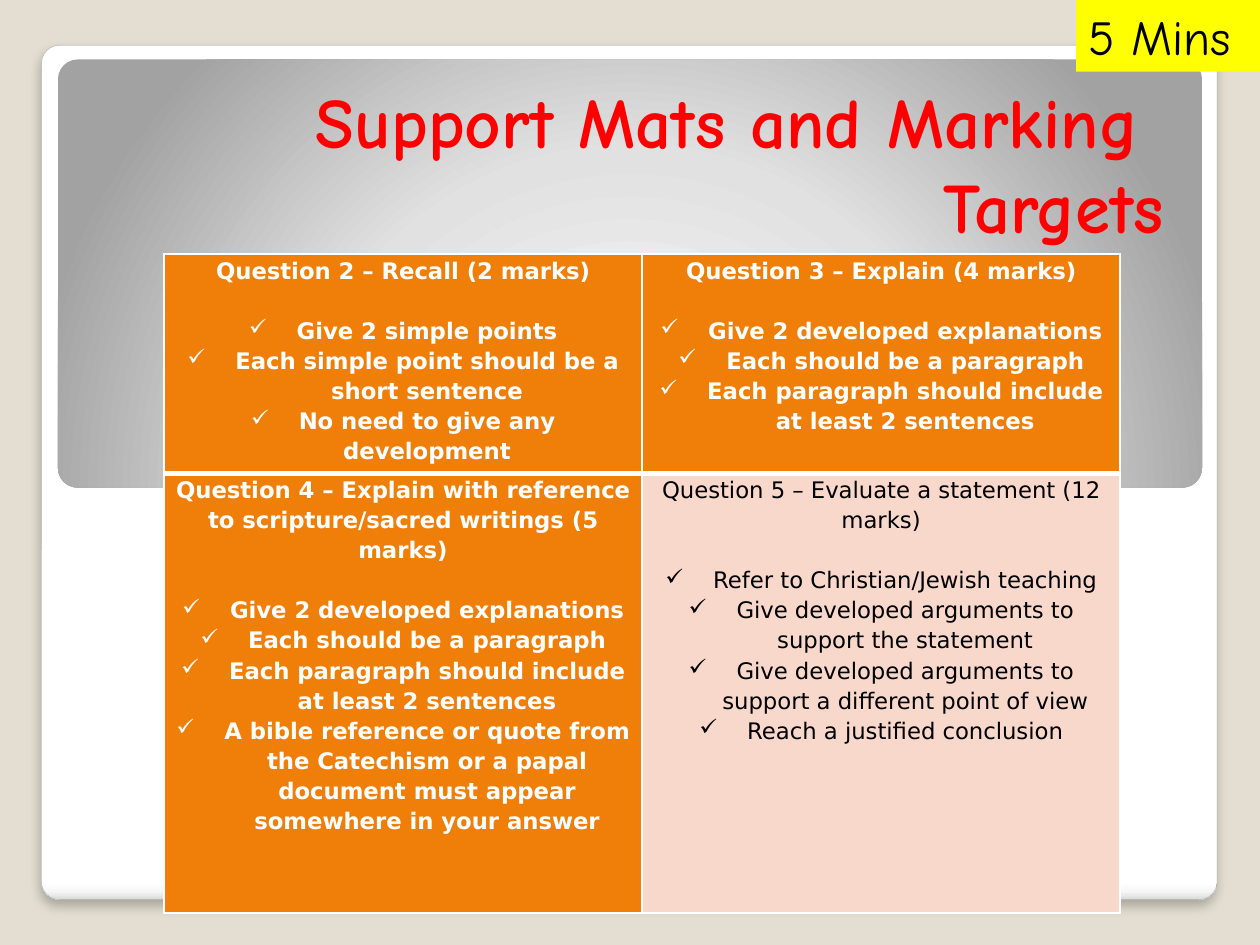
from pptx import Presentation
from pptx.dml.color import RGBColor
from pptx.enum.shapes import MSO_SHAPE
from pptx.enum.text import MSO_ANCHOR, MSO_AUTO_SIZE, PP_ALIGN
from pptx.oxml import parse_xml
from pptx.oxml.ns import nsdecls
from pptx.util import Emu, Inches, Pt

WIDTH, HEIGHT = Inches(10), Inches(7.5)
TITLE_FONT, BODY_FONT = "Comic Neue", "DejaVu Sans"
ORANGE, PINK, WHITE, BLACK = "F07F09", "F9D8CC", "FFFFFF", "000000"
ROW_SHARES = (1.74, 3.49)
LINE_GAP = Pt(17.2)

QUESTIONS = [
    [
        ("Question 2 – Recall (2 marks)",
         ["Give 2 simple points",
          "Each simple point should be a short sentence",
          "No need to give any development"]),
        ("Question 3 – Explain (4 marks)",
         ["Give 2 developed explanations",
          "Each should be a paragraph",
          "Each paragraph should include at least 2 sentences"]),
    ],
    [
        ("Question 4 – Explain with reference to scripture/sacred writings (5 marks)",
         ["Give 2 developed explanations",
          "Each should be a paragraph",
          "Each paragraph should include at least 2 sentences",
          "A bible reference or quote from the Catechism or a papal document "
          "must appear somewhere in your answer"]),
        ("Question 5 – Evaluate a statement (12 marks)",
         ["Refer to Christian/Jewish teaching",
          "Give developed arguments to support the statement",
          "Give developed arguments to support a different point of view",
          "Reach a justified conclusion"]),
    ],
]


def rgb(value):
    """Turn a hex string into a colour."""
    return RGBColor.from_string(value)


def share(x, y, w, h):
    """Return a box in slide units from shares of the slide's size."""
    return Emu(int(x * WIDTH)), Emu(int(y * HEIGHT)), Emu(int(w * WIDTH)), Emu(int(h * HEIGHT))


def set_font(p, name, size, color, bold=False):
    """Format the font of a paragraph."""
    p.font.name, p.font.size, p.font.bold = name, Pt(size), bold
    p.font.color.rgb = rgb(color)


def add_panel(s, box, radius, stops, direction):
    """Add a rounded panel with a gradient fill and no outline."""
    sp = s.shapes.add_shape(MSO_SHAPE.ROUNDED_RECTANGLE, *box)
    sp.adjustments[0] = radius
    sp.shadow.inherit = False
    sp.line.fill.background()
    marks = "".join(f'<a:gs pos="{pos * 1000}"><a:srgbClr val="{color}"/></a:gs>'
                    for pos, color in stops)
    gradient = parse_xml(f'<a:gradFill {nsdecls("a")} rotWithShape="1">'
                         f'<a:gsLst>{marks}</a:gsLst>{direction}</a:gradFill>')
    sp.element.spPr.find(".//{*}prstGeom").addnext(gradient)
    return sp


def add_backdrop(s):
    """Draw the white card and the grey panel on it."""
    card = add_panel(s, share(0.033, 0.048, 0.933, 0.904), 0.021,
                     [(0, WHITE), (98, WHITE), (99, "F7F7F7"), (100, "DADADA")],
                     '<a:lin ang="5400000" scaled="0"/>')
    card.line.color.rgb = rgb("A4A4A4")
    card.line.width = Pt(0.16)
    effects = card.element.spPr.find("{*}effectLst")
    effects.append(parse_xml(
        f'<a:outerShdw {nsdecls("a")} blurRad="{Pt(6)}" dist="{Pt(4)}" dir="5400000" '
        'rotWithShape="0"><a:srgbClr val="000000"><a:alpha val="25000"/>'
        '</a:srgbClr></a:outerShdw>'))
    add_panel(s, share(0.046, 0.063, 0.908, 0.453), 0.046,
              [(0, WHITE), (55, "E1E1E1"), (100, "A2A2A2")],
              '<a:path path="circle"><a:fillToRect l="50000" t="175000" '
              'r="50000" b="-75000"/></a:path>')


def place_title(s, box, text):
    """Move the title placeholder in front of the backdrop and format it."""
    sp = s.shapes.title
    s.shapes.element.append(sp.element)
    sp.left, sp.top, sp.width, sp.height = box
    tf = sp.text_frame
    tf.text = text
    tf.auto_size = MSO_AUTO_SIZE.NONE
    tf.vertical_anchor = MSO_ANCHOR.BOTTOM
    tf.margin_left = tf.margin_right = tf.margin_top = tf.margin_bottom = Inches(0.05)
    p = tf.paragraphs[0]
    p.alignment = PP_ALIGN.RIGHT
    set_font(p, TITLE_FONT, 40.5, "FF0000", True)


def add_timer(s, box, text):
    """Add the yellow time label."""
    sp = s.shapes.add_textbox(*box)
    sp.fill.solid()
    sp.fill.fore_color.rgb = rgb("FFFF00")
    tf = sp.text_frame
    tf.word_wrap = True
    tf.text = text
    set_font(tf.paragraphs[0], TITLE_FONT, 28, BLACK)


def set_borders(cell, bottom):
    """Give a cell white borders, with its own width at the bottom."""
    tc_pr = cell._tc.get_or_add_tcPr()
    for i, (side, width) in enumerate((("L", 1), ("R", 1), ("T", 1), ("B", bottom))):
        tc_pr.insert(i, parse_xml(
            f'<a:ln{side} {nsdecls("a")} w="{Pt(width)}"><a:solidFill>'
            f'<a:srgbClr val="{WHITE}"/></a:solidFill></a:ln{side}>'))


def set_tick(p):
    """Give a paragraph a hanging tick bullet."""
    p_pr = p._p.get_or_add_pPr()
    p_pr.set("marL", str(Inches(0.38)))
    p_pr.set("indent", str(-Inches(0.38)))
    p_pr.append(parse_xml(f'<a:buChar {nsdecls("a")} char="✓"/>'))


def fill_cell(cell, heading, points, fill, color, bold):
    """Write a question heading and its ticked points."""
    cell.fill.solid()
    cell.fill.fore_color.rgb = rgb(fill)
    cell.margin_left = cell.margin_right = Inches(0.06)
    cell.margin_top = cell.margin_bottom = 0
    tf = cell.text_frame
    tf.text = "\n".join([heading, *points])
    for i, p in enumerate(tf.paragraphs):
        p.alignment = PP_ALIGN.CENTER
        p.line_spacing = 1.15
        if i:
            set_tick(p)
        else:
            p.space_after = LINE_GAP
        set_font(p, BODY_FONT, 13, color, bold)


def add_questions(s, box):
    """Add the two by two table of questions."""
    table = s.shapes.add_table(2, 2, *box).table
    table.first_row = table.horz_banding = False
    for r, row in enumerate(QUESTIONS):
        table.rows[r].height = Emu(int(box[3] * ROW_SHARES[r] / sum(ROW_SHARES)))
        for c, (heading, points) in enumerate(row):
            cell = table.cell(r, c)
            style = (PINK, BLACK, False) if r and c else (ORANGE, WHITE, True)
            fill_cell(cell, heading, points, *style)
            set_borders(cell, 1 if r else 3)


def main():
    """Build and save the slide."""
    prs = Presentation()
    prs.slide_width, prs.slide_height = WIDTH, HEIGHT
    s = prs.slides.add_slide(prs.slide_layouts[5])
    s.background.fill.solid()
    s.background.fill.fore_color.rgb = rgb("E3DED1")
    add_backdrop(s)
    place_title(s, share(0.059, 0.076, 0.87, 0.193), "Support Mats and Marking \vTargets")
    add_timer(s, share(0.854, 0, 0.146, 0.076), "5 Mins")
    add_questions(s, share(0.13, 0.269, 0.759, 0.697))
    prs.save("out.pptx")


if __name__ == "__main__":
    main()
